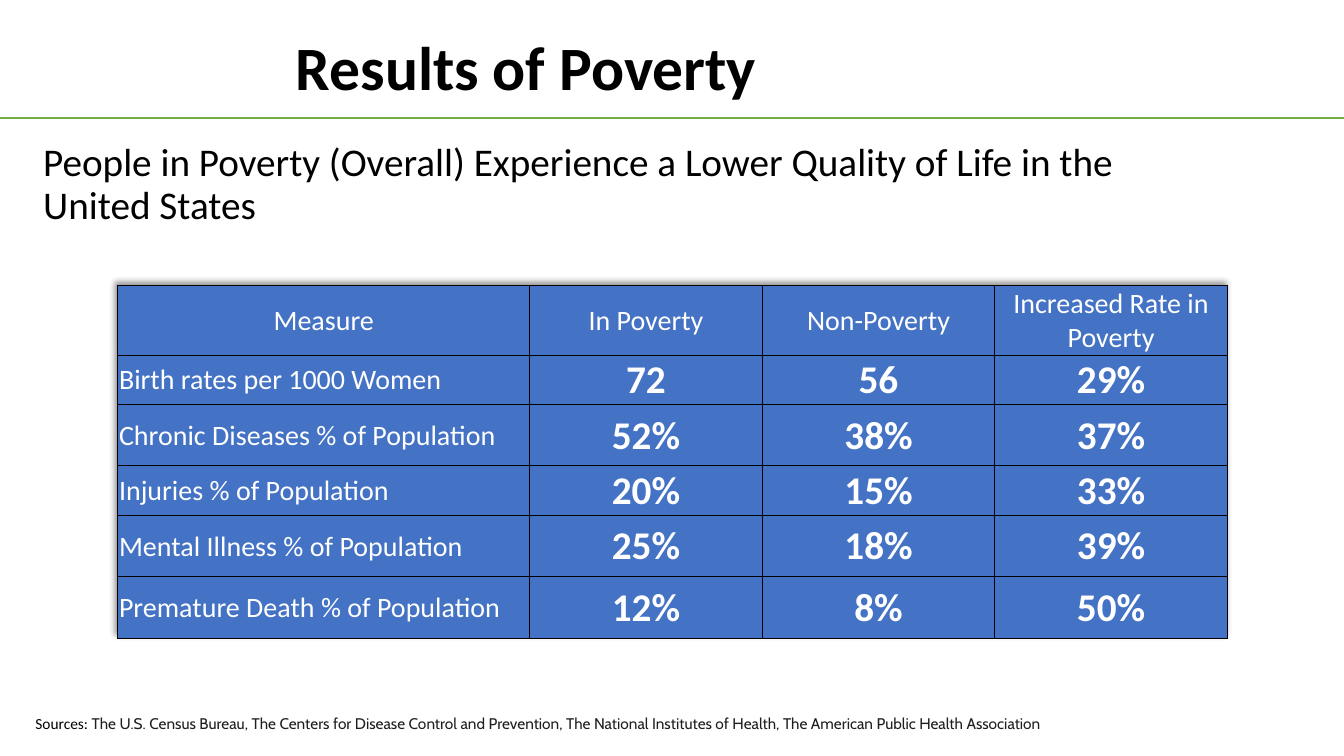
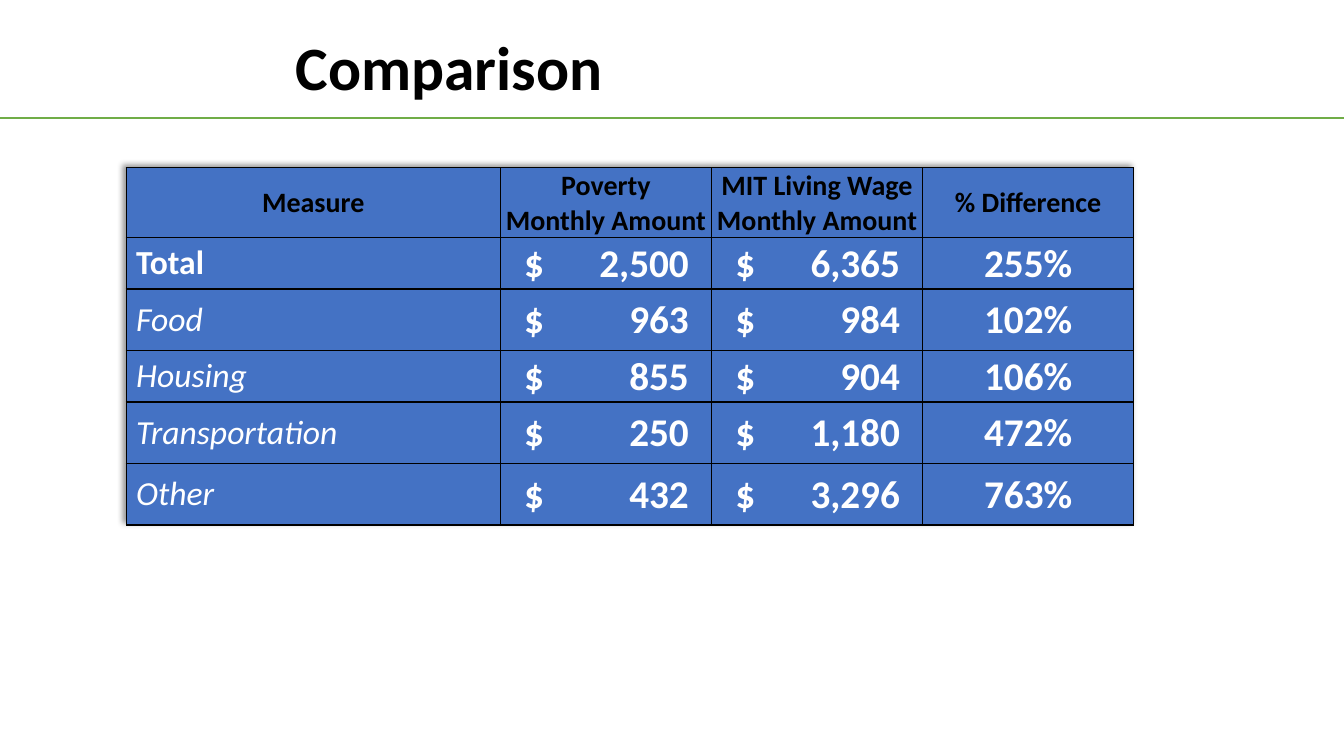
from dataclasses import dataclass

import pptx
import pptx.dml.color
import pptx.enum.shapes
import pptx.enum.text
import pptx.oxml
import pptx.oxml.ns
import pptx.util
from pptx.util import Cm

ALIGN = pptx.enum.text.PP_ALIGN
ANCHOR = pptx.enum.text.MSO_ANCHOR
NAMESPACE = pptx.oxml.ns.nsdecls("a")


@dataclass(frozen=True)
class Theme:
    black: str = "000000"
    white: str = "FFFFFF"
    source_ink: str = "1F1F1F"
    rule: str = "70AD47"
    cell: str = "4472C4"
    font: str = "Calibri"
    source_font: str = "Cabin"
    title: int = 44
    figure: int = 28
    category: int = 24
    label: int = 20
    source: int = 11


THEME = Theme()


@dataclass(frozen=True)
class TextStyle:
    size: int
    colour: str = THEME.black
    bold: bool = False
    italic: bool = False
    font: str = THEME.font


@dataclass(frozen=True)
class CellStyle:
    text: TextStyle
    align: ALIGN = ALIGN.CENTER
    left: float = 0.03
    right: float = 0.03
    top: float = 0.03
    bottom: float = 0
    tab: float = 0


@dataclass(frozen=True)
class DataTable:
    left: float
    top: float
    label_width: float
    figure_width: float
    header: CellStyle
    labels: list[CellStyle]
    rows: list[list[str]]


TITLE = TextStyle(THEME.title, bold=True)
FIGURE = TextStyle(THEME.figure, THEME.white, bold=True)
FIGURE_CELL = CellStyle(FIGURE)
MONEY_CELL = CellStyle(FIGURE, ALIGN.LEFT, left=0.6, tab=4.15)
PLAIN_HEADER = CellStyle(TextStyle(THEME.label, THEME.white))
BOLD_HEADER = CellStyle(TextStyle(THEME.label, bold=True))
PLAIN_LABEL = CellStyle(PLAIN_HEADER.text, ALIGN.LEFT)


def category_cell(bold: bool = False) -> CellStyle:
    """Roomier label cell: bold for the total, italic for its parts."""
    text = TextStyle(THEME.category, THEME.white, bold=bold, italic=not bold)
    return CellStyle(text, ALIGN.LEFT, left=0.25, right=0.25, top=0.13, bottom=0.13)


ROW_HEIGHTS = [1.76, 1.24, 1.55, 1.24, 1.55, 1.55]

POVERTY_TABLE = DataTable(
    2.97, 7.19, 10.38, 5.86, PLAIN_HEADER, [PLAIN_LABEL] * 5,
    [
        ["Measure", "In Poverty", "Non-Poverty", "Increased Rate in Poverty"],
        ["Birth rates per 1000 Women", "72", "56", "29%"],
        ["Chronic Diseases % of Population", "52%", "38%", "37%"],
        ["Injuries % of Population", "20%", "15%", "33%"],
        ["Mental Illness % of Population", "25%", "18%", "39%"],
        ["Premature Death % of Population", "12%", "8%", "50%"],
    ],
)

WAGE_TABLE = DataTable(
    3.18, 4.23, 9.43, 5.32, BOLD_HEADER,
    [category_cell(bold=True)] + [category_cell()] * 4,
    [
        ["Measure", "Poverty\nMonthly Amount", "MIT Living Wage Monthly Amount", "% Difference"],
        ["Total", "$\t2,500", "$\t6,365", "255%"],
        ["Food", "$\t963", "$\t984", "102%"],
        ["Housing", "$\t855", "$\t904", "106%"],
        ["Transportation", "$\t250", "$\t1,180", "472%"],
        ["Other", "$\t432", "$\t3,296", "763%"],
    ],
)


def rgb(colour: str) -> pptx.dml.color.RGBColor:
    return pptx.dml.color.RGBColor.from_string(colour)


def apply(target, values: dict) -> None:
    for name, value in values.items():
        setattr(target, name, value)


def add_span(para, text: str, style: TextStyle) -> None:
    span = para.add_run()
    span.text = text
    apply(span.font, {
        "name": style.font, "size": pptx.util.Pt(style.size),
        "bold": style.bold, "italic": style.italic,
    })
    span.font.color.rgb = rgb(style.colour)


def add_title(slide, text: str) -> None:
    title = slide.shapes.title
    apply(title, {"left": Cm(7.2), "top": Cm(0.91), "width": Cm(26.24), "height": Cm(1.73)})
    apply(title.text_frame, {
        "vertical_anchor": ANCHOR.MIDDLE,
        "auto_size": pptx.enum.text.MSO_AUTO_SIZE.NONE,
    })
    para = title.text_frame.paragraphs[0]
    apply(para, {"alignment": ALIGN.LEFT, "line_spacing": 0.9})
    add_span(para, text, TITLE)


def add_rule(slide, width: int) -> None:
    """Thin line under the title, across the whole slide."""
    rule = slide.shapes.add_connector(
        pptx.enum.shapes.MSO_CONNECTOR.STRAIGHT, 0, Cm(2.97), width, Cm(2.97))
    rule.line.color.rgb = rgb(THEME.rule)
    rule.line.width = pptx.util.Pt(1.25)
    rule._element.spPr.append(pptx.oxml.parse_xml(f"<a:effectLst {NAMESPACE}/>"))


def add_text(slide, place: tuple[float, ...], spans: list[tuple[str, TextStyle]],
             spacing: float = 1.0) -> None:
    box = slide.shapes.add_textbox(*map(Cm, place))
    box.text_frame.word_wrap = True
    para = box.text_frame.paragraphs[0]
    para.line_spacing = spacing
    for text, style in spans:
        add_span(para, text, style)


def add_borders(cell) -> None:
    properties = cell._tc.get_or_add_tcPr()
    for position, side in enumerate(("lnL", "lnR", "lnT", "lnB")):
        properties.insert(position, pptx.oxml.parse_xml(
            f'<a:{side} {NAMESPACE} w="12700"><a:solidFill>'
            f'<a:srgbClr val="{THEME.black}"/></a:solidFill></a:{side}>'))


def fill_cell(cell, text: str, style: CellStyle) -> None:
    apply(cell, {
        "vertical_anchor": ANCHOR.MIDDLE,
        "margin_left": Cm(style.left), "margin_right": Cm(style.right),
        "margin_top": Cm(style.top), "margin_bottom": Cm(style.bottom),
    })
    cell.fill.solid()
    cell.fill.fore_color.rgb = rgb(THEME.cell)
    add_borders(cell)
    frame = cell.text_frame
    for number, line in enumerate(text.split("\n")):
        para = frame.add_paragraph() if number else frame.paragraphs[0]
        para.alignment = style.align
        if style.tab:
            para._p.get_or_add_pPr().append(pptx.oxml.parse_xml(
                f'<a:tabLst {NAMESPACE}><a:tab pos="{Cm(style.tab)}" algn="r"/></a:tabLst>'))
        add_span(para, line, style.text)


def cell_style(data: DataTable, row: int, column: int) -> CellStyle:
    if row == 0:
        return data.header
    if column == 0:
        return data.labels[row - 1]
    return MONEY_CELL if data.rows[row][column].startswith("$") else FIGURE_CELL


def add_data_table(slide, data: DataTable) -> None:
    widths = [data.label_width] + [data.figure_width] * 3
    table = slide.shapes.add_table(
        len(data.rows), len(widths), Cm(data.left), Cm(data.top),
        Cm(sum(widths)), Cm(sum(ROW_HEIGHTS))).table
    apply(table, {"first_row": False, "horz_banding": False})
    table._tbl.tblPr.insert(0, pptx.oxml.parse_xml(
        f'<a:effectLst {NAMESPACE}><a:outerShdw blurRad="50800" dist="38100" dir="13500000" '
        f'algn="br" rotWithShape="0"><a:srgbClr val="{THEME.black}"><a:alpha val="40000"/>'
        '</a:srgbClr></a:outerShdw></a:effectLst>'))
    for column, width in zip(table.columns, widths):
        column.width = Cm(width)
    for row, height in zip(table.rows, ROW_HEIGHTS):
        row.height = Cm(height)
    for row, texts in enumerate(data.rows):
        for column, text in enumerate(texts):
            fill_cell(table.cell(row, column), text, cell_style(data, row, column))


def add_page(deck, title: str, data: DataTable):
    """Title-only slide with the shared title, rule and table."""
    page = deck.slides.add_slide(deck.slide_layouts.get_by_name("Title Only"))
    add_rule(page, deck.slide_width)
    add_title(page, title)
    add_data_table(page, data)
    return page


def main() -> None:
    deck = pptx.Presentation()
    apply(deck, {"slide_width": Cm(33.87), "slide_height": Cm(19.05)})

    results = add_page(deck, "Results of Poverty", POVERTY_TABLE)
    add_text(results, (0.84, 3.48, 29.21, 2.67), [
        ("People in Poverty (Overall) Experience a Lower Quality of Life in the United States",
         TextStyle(THEME.figure)),
    ], spacing=0.9)
    add_text(results, (0.64, 17.86, 26.16, 1.19), [
        ("Sources: ", TextStyle(THEME.source)),
        ("The U.S. Census Bureau, The Centers for Disease Control and Prevention, "
         "The National Institutes of Health, The American Public Health Association",
         TextStyle(THEME.source, THEME.source_ink, font=THEME.source_font)),
    ])

    add_page(deck, "Comparison", WAGE_TABLE)
    deck.save("out.pptx")


if __name__ == "__main__":
    main()
